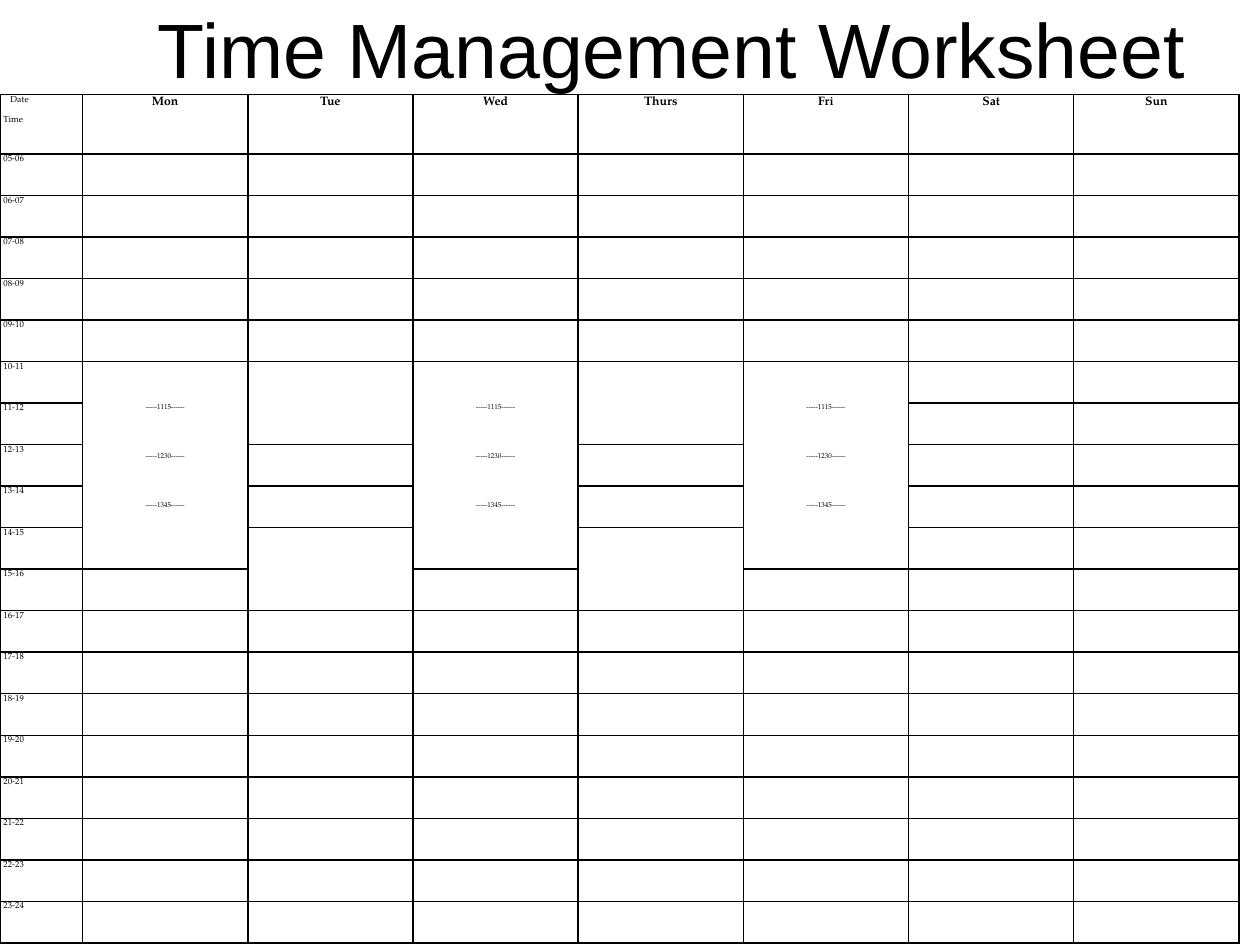
from lxml import etree
from pptx import Presentation
from pptx.dml.color import RGBColor
from pptx.enum.text import MSO_ANCHOR, PP_ALIGN
from pptx.oxml.ns import qn
from pptx.util import Pt

LEFT, CENTER = PP_ALIGN.LEFT, PP_ALIGN.CENTER
MIDDLE = MSO_ANCHOR.MIDDLE
BLACK = RGBColor(0, 0, 0)
TITLE_FONT, GRID_FONT = "Arial", "TeX Gyre Pagella"

TITLE = "Time Management Worksheet"
DAYS = ["Mon", "Tue", "Wed", "Thurs", "Fri", "Sat", "Sun"]
FIRST_HOUR, LAST_HOUR = 5, 24
HOURS = [f"{hour:02}-{hour + 1:02}" for hour in range(FIRST_HOUR, LAST_HOUR)]
LONG_DAYS, SHORT_DAYS = ["Mon", "Wed", "Fri"], ["Tue", "Thurs"]
OPEN_BLOCKS = [
    (LONG_DAYS, "10-11", "14-15"),
    (SHORT_DAYS, "10-11", "11-12"),
    (SHORT_DAYS, "14-15", "15-16"),
]
CLASS_MARKS = [
    ("11-12", "-----1115------", 0),
    ("12-13", "-----1230------", 4.5),
    ("13-14", "-----1345------", 9),
]

TITLE_BOX = {"left": Pt(60), "top": Pt(0), "width": Pt(648), "height": Pt(54)}
TIME_WIDTH, DAY_WIDTH = 47.2, 94.4
HEADER_HEIGHT, HOUR_HEIGHT = 34, 23.75
GRID_TOP = 54
SIDE_MARGIN = 2
DATE_INDENT, TIME_GAP = 4, 5.7
BORDER = Pt(1)
SIDES = {"L": "left", "R": "right", "T": "top", "B": "bottom"}


def apply(target, values):
    for name, value in values.items():
        setattr(target, name, value)


def write(paragraph, text, size, align=LEFT, bold=False, font=GRID_FONT, spacing=1.15):
    apply(paragraph, {"alignment": align, "line_spacing": spacing})
    run = paragraph.add_run()
    run.text = text
    apply(run.font, {"name": font, "size": Pt(size), "bold": bold})
    run.font.color.rgb = BLACK


def draw_borders(cell, visible):
    properties = cell._tc.get_or_add_tcPr()
    for letter, side in SIDES.items():
        line = etree.SubElement(properties, qn(f"a:ln{letter}"), w=str(BORDER))
        if side in visible:
            fill = etree.SubElement(line, qn("a:solidFill"))
            etree.SubElement(fill, qn("a:srgbClr"), val=str(BLACK))
        else:
            etree.SubElement(line, qn("a:noFill"))


def visible_sides(row, column):
    sides = set(SIDES.values())
    for days, start, end in OPEN_BLOCKS:
        first, last = HOURS.index(start) + 1, HOURS.index(end) + 1
        if column and DAYS[column - 1] in days and first <= row <= last:
            if row > first:
                sides.discard("top")
            if row < last:
                sides.discard("bottom")
    return sides


def first_paragraph(cell):
    return cell.text_frame.paragraphs[0]


deck = Presentation()
apply(deck, {"slide_width": Pt(720), "slide_height": Pt(540)})
slide = deck.slides.add_slide(deck.slide_layouts[5])

title = slide.shapes.title
apply(title, TITLE_BOX)
apply(title.text_frame, {"vertical_anchor": MIDDLE, "word_wrap": True})
write(title.text_frame.paragraphs[0], TITLE, 44, CENTER, font=TITLE_FONT, spacing=1.0)

widths = [TIME_WIDTH] + [DAY_WIDTH] * len(DAYS)
heights = [HEADER_HEIGHT] + [HOUR_HEIGHT] * len(HOURS)
grid = slide.shapes.add_table(
    len(heights), len(widths), Pt(0), Pt(GRID_TOP), Pt(sum(widths)), Pt(sum(heights))
).table
apply(grid, {"first_row": False, "horz_banding": False})
for column, width in zip(grid.columns, widths):
    column.width = Pt(width)
for row, height in zip(grid.rows, heights):
    row.height = Pt(height)

margins = {
    "margin_left": Pt(SIDE_MARGIN), "margin_right": Pt(SIDE_MARGIN),
    "margin_top": Pt(0), "margin_bottom": Pt(0),
}
for row in range(len(heights)):
    for column in range(len(widths)):
        cell = grid.cell(row, column)
        apply(cell, margins)
        draw_borders(cell, visible_sides(row, column))
        cell.fill.background()

corner = grid.cell(0, 0)
date_label = first_paragraph(corner)
write(date_label, "Date", 5)
date_label._p.get_or_add_pPr().set("marL", str(Pt(DATE_INDENT)))
time_label = corner.text_frame.add_paragraph()
write(time_label, "Time", 5)
time_label.space_before = Pt(TIME_GAP)

for column, day in enumerate(DAYS, 1):
    write(first_paragraph(grid.cell(0, column)), day, 7, CENTER, bold=True)
for row, hour in enumerate(HOURS, 1):
    write(first_paragraph(grid.cell(row, 0)), hour, 5)
for day in LONG_DAYS:
    for hour, mark, drop in CLASS_MARKS:
        cell = grid.cell(HOURS.index(hour) + 1, DAYS.index(day) + 1)
        cell.margin_top = Pt(drop)
        write(first_paragraph(cell), mark, 4, CENTER)

deck.save("out.pptx")
